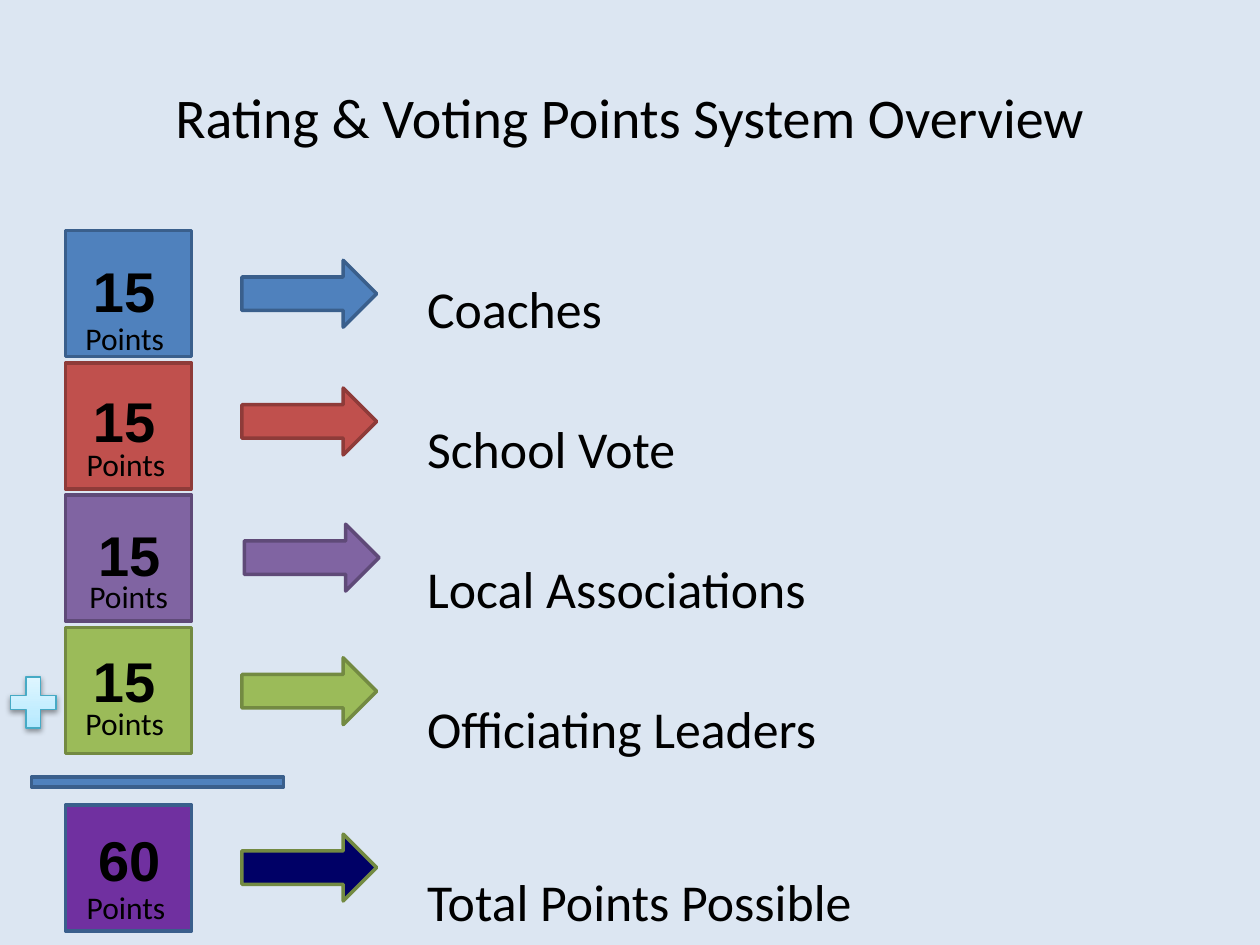
from copy import deepcopy

from lxml import etree
from pptx import Presentation
from pptx.dml.color import RGBColor
from pptx.enum.shapes import MSO_SHAPE
from pptx.enum.text import MSO_ANCHOR, PP_ALIGN
from pptx.oxml.ns import qn
from pptx.util import Pt

RECT = MSO_SHAPE.RECTANGLE
ARROW = MSO_SHAPE.RIGHT_ARROW
PLUS = MSO_SHAPE.MATH_PLUS
CENTER = PP_ALIGN.CENTER
MIDDLE = MSO_ANCHOR.MIDDLE

BACKGROUND = RGBColor(0xDC, 0xE6, 0xF2)
BLACK = RGBColor(0x00, 0x00, 0x00)
BLUE = RGBColor(0x4F, 0x81, 0xBD)
BLUE_EDGE = RGBColor(0x3A, 0x5F, 0x8C)
RED = RGBColor(0xC0, 0x50, 0x4D)
RED_EDGE = RGBColor(0x8E, 0x3B, 0x39)
PURPLE = RGBColor(0x80, 0x64, 0xA2)
PURPLE_EDGE = RGBColor(0x5F, 0x4A, 0x78)
GREEN = RGBColor(0x9B, 0xBB, 0x59)
GREEN_EDGE = RGBColor(0x73, 0x8A, 0x42)
VIOLET = RGBColor(0x70, 0x30, 0xA0)
NAVY = RGBColor(0x00, 0x00, 0x66)
PLUS_EDGE = RGBColor(0x46, 0xAA, 0xC5)
PLUS_STOPS = [
    (0, RGBColor(0xA7, 0xE6, 0xFF)),
    (0.35, RGBColor(0xC1, 0xED, 0xFF)),
    (1, RGBColor(0xE7, 0xF8, 0xFF)),
]

SQUARE = 72
SQUARE_LEFT = 37.44
LABELS = [
    ("Coaches", 0),
    ("School Vote", 44.5),
    ("Local Associations", 44.5),
    ("Officiating Leaders", 44.5),
    ("Total Points Possible", 63.3),
]
# Each row: number, square top, fill, edge, arrow fill, arrow edge,
# then offsets from the square: arrow (x, y), number (x, y), caption (x, y).
ROWS = [
    ("15", 131.76, BLUE, BLUE_EDGE, BLUE, BLUE_EDGE, (100.8, 17), (8.6, 11.5), (4.3, 46.8)),
    ("15", 207.36, RED, RED_EDGE, RED, RED_EDGE, (100.8, 14.4), (8.6, 10.1), (5, 43.2)),
    ("15", 282.96, PURPLE, PURPLE_EDGE, PURPLE, PURPLE_EDGE, (102.2, 16.6), (11.5, 10.8), (6.5, 43.2)),
    ("15", 358.56, GREEN, GREEN_EDGE, GREEN, GREEN_EDGE, (100.8, 17.3), (8.6, 7.2), (4.3, 40.3)),
    ("60", 460.08, VIOLET, BLUE_EDGE, NAVY, GREEN_EDGE, (100.8, 16.6), (11.5, 7.9), (5, 43.9)),
]


def add_block(s, kind, x, y, w, h, fill, edge):
    """Add a filled, outlined shape without a shadow."""
    sp = s.shapes.add_shape(kind, Pt(x), Pt(y), Pt(w), Pt(h))
    sp.shadow.inherit = False
    sp.fill.solid()
    sp.fill.fore_color.rgb = fill
    sp.line.color.rgb = edge
    sp.line.width = Pt(2)
    return sp


def add_run(p, text, size, font="Calibri", bold=False):
    """Add one black run to a paragraph."""
    r = p.add_run()
    r.text = text
    r.font.size = Pt(size)
    r.font.name = font
    r.font.bold = bold
    r.font.color.rgb = BLACK


def add_box(s, x, y, w, h):
    """Add a wrapping text box and return its text frame."""
    tf = s.shapes.add_textbox(Pt(x), Pt(y), Pt(w), Pt(h)).text_frame
    tf.word_wrap = True
    return tf


def add_title(s, x, y, w, h):
    """Place the centred slide title."""
    tf = add_box(s, x, y, w, h)
    tf.vertical_anchor = MIDDLE
    p = tf.paragraphs[0]
    p.alignment = CENTER
    add_run(p, "Rating & Voting Points System Overview", 32)


def add_labels(s, x, y, w, h):
    """Place the list of voter groups."""
    tf = add_box(s, x, y, w, h)
    tf.margin_left = Pt(15.84)
    for i, (label, gap) in enumerate(LABELS):
        p = tf.add_paragraph() if i else tf.paragraphs[0]
        p.space_before = Pt(gap)
        add_run(p, label, 29.6)


def add_row(s, x, row):
    """Place one points square with its number, caption and arrow."""
    number, y, fill, edge, arrow_fill, arrow_edge, arrow, digits, caption = row
    add_block(s, RECT, x, y, SQUARE, SQUARE, fill, edge)
    add_block(s, ARROW, x + arrow[0], y + arrow[1], 77, 38.2, arrow_fill, arrow_edge)
    tf = add_box(s, x + digits[0], y + digits[1], 54, 46)
    add_run(tf.paragraphs[0], number, 32, "Arial", True)
    tf = add_box(s, x + caption[0], y + caption[1], 93, 29)
    add_run(tf.paragraphs[0], "Points", 18)


def add_plus(s, x, y, w, h):
    """Place the shaded plus sign with its soft shadow."""
    sp = add_block(s, PLUS, x, y, w, h, BLUE, PLUS_EDGE)
    sp.line.width = Pt(0.75)
    sp.fill.gradient()
    sp.fill.gradient_angle = 90
    stops = sp._element.spPr.find(".//" + qn("a:gsLst"))
    stops.append(deepcopy(stops[0]))
    for stop, (position, color) in zip(sp.fill.gradient_stops, PLUS_STOPS):
        stop.position = position
        stop.color.rgb = color
    effects = sp._element.spPr.find(qn("a:effectLst"))
    shadow = etree.SubElement(
        effects, qn("a:outerShdw"), blurRad=str(Pt(3.1)), dist=str(Pt(1.6)),
        dir="5400000", rotWithShape="0")
    color = etree.SubElement(shadow, qn("a:srgbClr"), val="000000")
    etree.SubElement(color, qn("a:alpha"), val="38000")


def main():
    """Build and save the points overview slide."""
    prs = Presentation()
    prs.slide_width, prs.slide_height = Pt(720), Pt(540)
    s = prs.slides.add_slide(prs.slide_layouts[6])
    s.background.fill.solid()
    s.background.fill.fore_color.rgb = BACKGROUND
    add_labels(s, 228.24, 154.5, 455.76, 377.5)
    add_title(s, 36, 21.6, 648, 90)
    for row in ROWS:
        add_row(s, SQUARE_LEFT, row)
    add_block(s, RECT, 18, 444, 144, 5.8, BLUE, BLUE_EDGE)
    add_plus(s, 1.44, 381.6, 35.3, 39.6)
    prs.save("out.pptx")


if __name__ == "__main__":
    main()
